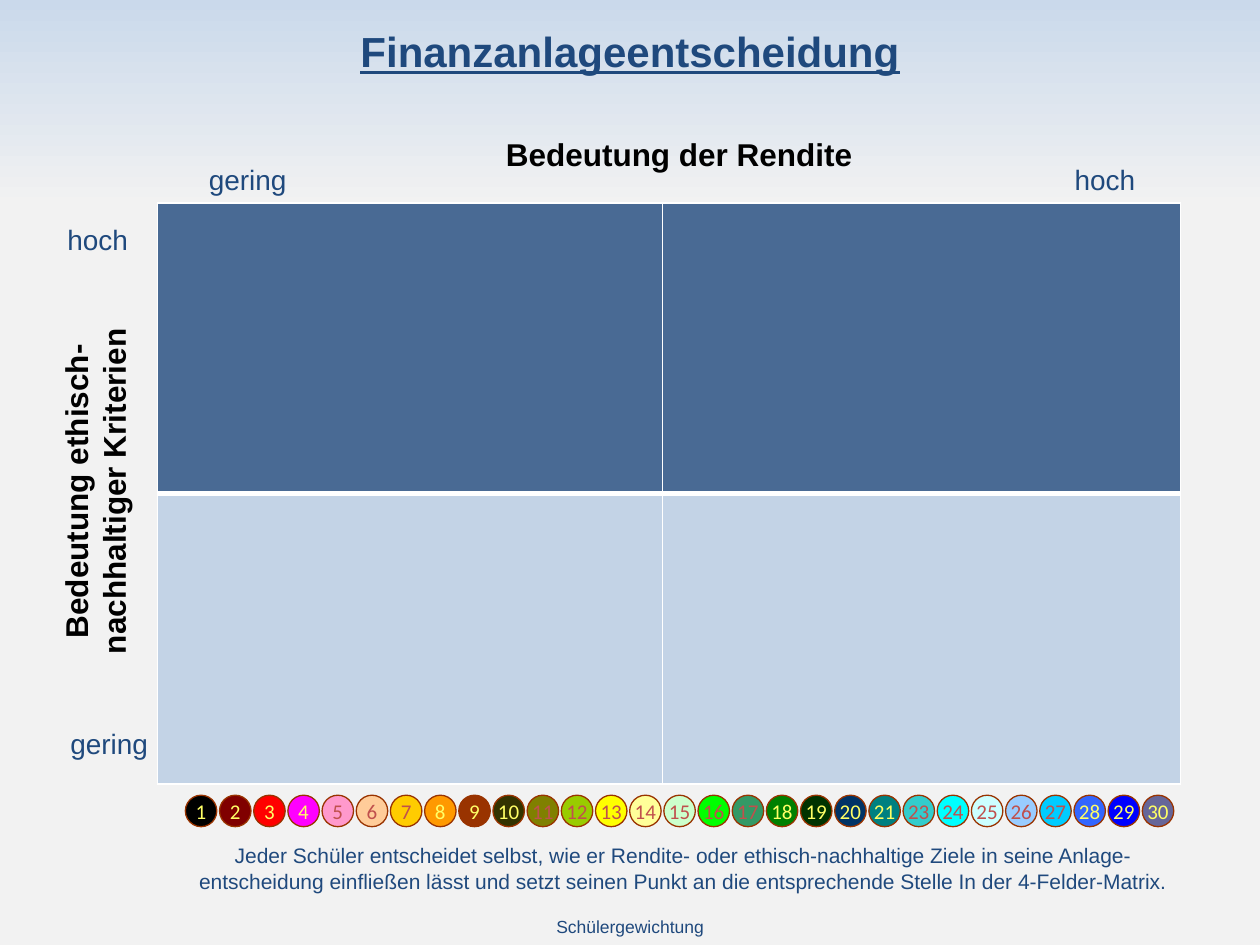
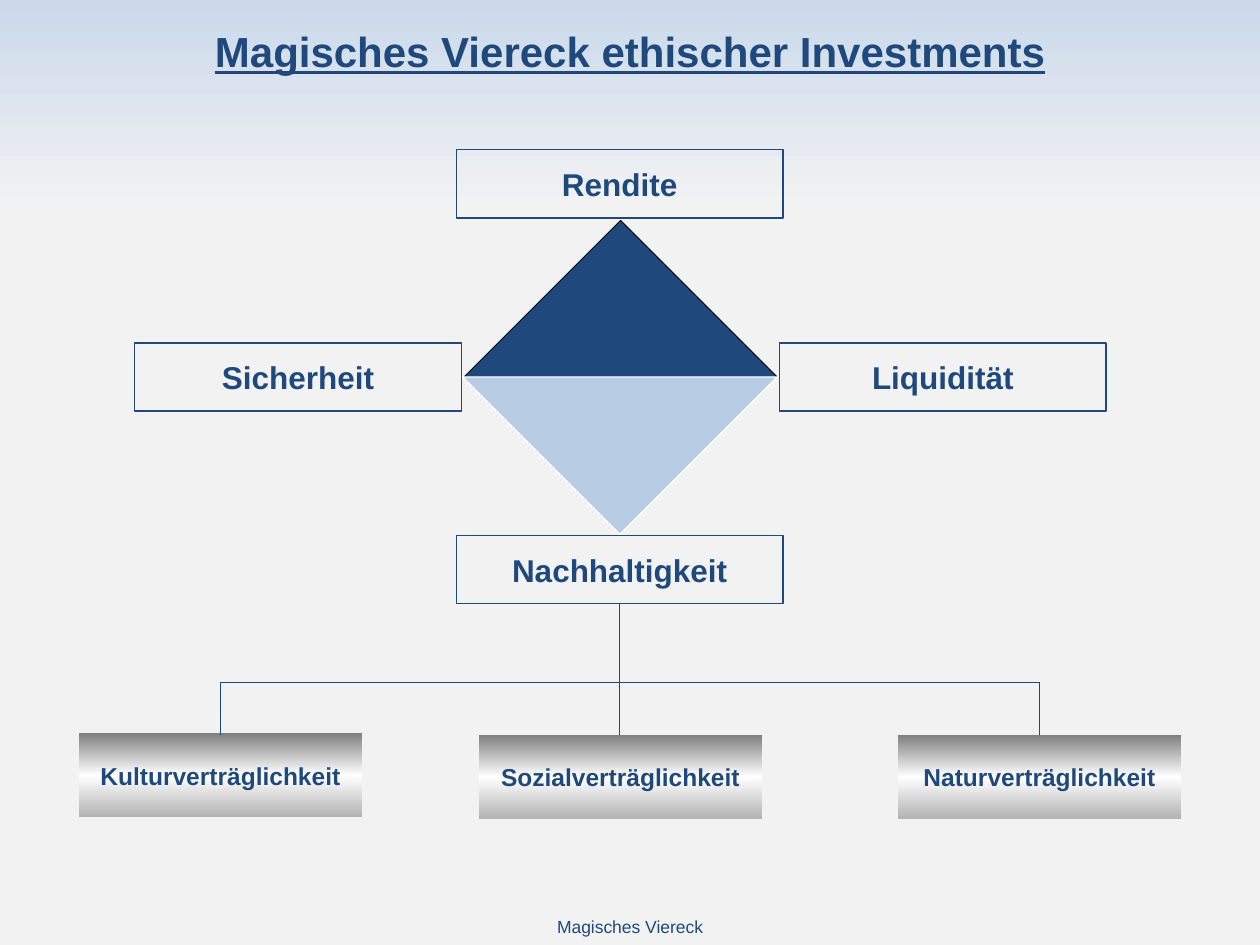
from copy import deepcopy
from dataclasses import dataclass
from typing import Optional

from lxml.etree import SubElement
from pptx import Presentation
from pptx.dml.color import RGBColor
from pptx.enum.shapes import MSO_CONNECTOR, MSO_SHAPE
from pptx.enum.text import MSO_ANCHOR, MSO_AUTO_SIZE, PP_ALIGN
from pptx.oxml.ns import qn
from pptx.util import Pt

COLORS = {
    "navy": "1F497D", "sky": "B8CCE4", "black": "000000", "white": "FFFFFF",
    "gray": "808080", "rust": "993300", "yellow": "FFFF66", "red": "C0504D",
}
BACKGROUND = [(0, "CAD9EB"), (22, "F2F2F2"), (100, "F2F2F2")]
STEEL = [(0, "808080"), (50, "FFFFFF"), (100, "B2B2B2")]

STYLES = {
    "title": {"name": "Arial", "size": Pt(24), "bold": True, "underline": True},
    "footer": {"name": "Arial", "size": Pt(10), "bold": False},
    "axis": {"name": "Arial", "size": Pt(18), "bold": True},
    "scale": {"name": "Arial", "size": Pt(16)},
    "note": {"name": "Arial", "size": Pt(12)},
    "branch": {"name": "Arial", "size": Pt(14), "bold": True},
    "dot": {"name": "Calibri", "size": Pt(12)},
}


@dataclass
class Label:
    text: str
    left: float
    top: float
    width: float
    height: float
    style: str
    color: str = "navy"
    align: PP_ALIGN = PP_ALIGN.CENTER
    anchor: MSO_ANCHOR = MSO_ANCHOR.TOP
    wrap: bool = True
    vert: Optional[str] = None

    @property
    def frame(self) -> list:
        return [Pt(v) for v in (self.left, self.top, self.width, self.height)]


@dataclass
class Block:
    kind: MSO_SHAPE
    left: float
    top: float
    width: float
    height: float
    fill: Optional[str] = None
    line: Optional[str] = None
    rotation: float = 0


def rgb(color: str) -> RGBColor:
    """Resolve a palette name or a plain hex string."""
    return RGBColor.from_string(COLORS.get(color, color))


def set_gradient(fill, element, stops: list) -> None:
    """Fill from top to bottom; element is the XML that holds the fill."""
    fill.gradient()
    fill.gradient_angle = 270
    gs_list = next(element.iter(qn("a:gsLst")))
    while len(gs_list) < len(stops):
        gs_list.append(deepcopy(gs_list[-1]))
    for stop, (position, color) in zip(fill.gradient_stops, stops):
        stop.position = position / 100
        stop.color.rgb = rgb(color)


def write_text(sp, label: Label) -> None:
    tf = sp.text_frame
    for key, value in {"word_wrap": label.wrap, "auto_size": MSO_AUTO_SIZE.NONE,
                       "vertical_anchor": label.anchor}.items():
        setattr(tf, key, value)
    if label.vert:
        tf._txBody.bodyPr.set("vert", label.vert)
    p = tf.paragraphs[0]
    p.alignment = label.align
    r = p.add_run()
    r.text = label.text
    for key, value in STYLES[label.style].items():
        setattr(r.font, key, value)
    r.font.color.rgb = rgb(label.color)


def add_label(slide, label: Label) -> None:
    write_text(slide.shapes.add_textbox(*label.frame), label)


def add_block(slide, block: Block):
    sp = slide.shapes.add_shape(
        block.kind, Pt(block.left), Pt(block.top), Pt(block.width), Pt(block.height))
    sp.shadow.inherit = False
    sp.rotation = block.rotation
    for fill, color in ((sp.fill, block.fill), (sp.line.fill, block.line)):
        if color:
            fill.solid()
            fill.fore_color.rgb = rgb(color)
        else:
            fill.background()
    if block.line:
        sp.line.width = Pt(0.75)
    return sp


def add_text_block(slide, label: Label, kind=MSO_SHAPE.RECTANGLE, fill=None, line=None):
    sp = add_block(slide, Block(kind, label.left, label.top, label.width,
                                label.height, fill, line))
    label.anchor, label.wrap = MSO_ANCHOR.MIDDLE, False
    write_text(sp, label)
    return sp


def add_line(slide, x1: float, y1: float, x2: float, y2: float) -> None:
    cn = slide.shapes.add_connector(
        MSO_CONNECTOR.STRAIGHT, Pt(x1), Pt(y1), Pt(x2), Pt(y2))
    cn.line.color.rgb = rgb("navy")
    cn.line.width = Pt(0.75)
    SubElement(cn._element.spPr, qn("a:effectLst"))


def new_slide(prs, heading: str, footer: str):
    """Add a slide with its underlined heading and its small title at the foot."""
    slide = prs.slides.add_slide(prs.slide_layouts[5])
    add_label(slide, Label(heading, 24, 3, 672, 52.5, "title",
                           anchor=MSO_ANCHOR.MIDDLE, wrap=False))
    label = Label(footer, 288, 518.4, 144, 21.6, "footer", anchor=MSO_ANCHOR.MIDDLE)
    title = slide.shapes.title
    title.left, title.top, title.width, title.height = label.frame
    write_text(title, label)
    return slide


def format_cell(cell, color: str, borders: dict) -> None:
    """Set white borders of the given widths and a fill of 80 % opacity."""
    tc_pr = cell._tc.get_or_add_tcPr()
    for side, width in borders.items():
        ln = SubElement(tc_pr, qn(f"a:{side}"), w=str(Pt(width)))
        SubElement(SubElement(ln, qn("a:solidFill")), qn("a:srgbClr"), val=COLORS["white"])
    cell.fill.solid()
    cell.fill.fore_color.rgb = rgb(color)
    SubElement(tc_pr.find(qn("a:solidFill"))[0], qn("a:alpha"), val="80000")


def add_matrix(slide) -> None:
    table = slide.shapes.add_table(2, 2, Pt(90), Pt(116), Pt(584.6), Pt(332)).table
    for column, width in zip(table.columns, (288.7, 295.9)):
        column.width = Pt(width)
    rows = (("navy", 1, 3), ("sky", 3, 1))
    for i, (color, top, bottom) in enumerate(rows):
        table.rows[i].height = Pt(166)
        for cell in table.rows[i].cells:
            format_cell(cell, color, {"lnL": 1, "lnR": 1, "lnT": top, "lnB": bottom})


AXIS_LABELS = [
    Label("Bedeutung der Rendite", 280.8, 73.4, 214.6, 28.8, "axis", "black", wrap=False),
    Label("gering", 112.3, 89.3, 60.5, 26.6, "scale", align=PP_ALIGN.LEFT),
    Label("hoch", 607, 89.3, 51.1, 26.6, "scale", align=PP_ALIGN.LEFT),
    Label("hoch", 24, 123.8, 56.2, 26.6, "scale", align=PP_ALIGN.RIGHT),
    Label("gering", 24, 411.8, 67.7, 26.6, "scale", align=PP_ALIGN.RIGHT),
    Label("Bedeutung ethisch- nachhaltiger Kriterien", 28.8, 167, 58.3, 227.5,
          "axis", "black", vert="vert270"),
    Label("Jeder Schüler entscheidet selbst, wie er Rendite- oder ethisch-nachhaltige "
          "Ziele in seine Anlage-entscheidung einfließen lässt und setzt seinen Punkt "
          "an die entsprechende Stelle In der 4-Felder-Matrix.",
          106.6, 478.1, 568, 36.7, "note"),
]
DOT_NUMBERS = [n for n in range(1, 31) if n != 22]
DOT_FILLS = """
    000000 800000 FF0000 FF00FF FF99CC FFCC99 FFCC00 FF9900 993300 333300
    808000 99CC00 FFFF00 FFFF99 CCFFCC 00FF00 339966 008000 003300 003366
    008080 33CCCC 00FFFF CCFFFF 99CCFF 00CCFF 3366FF 0000FF 666699""".split()
RED_NUMBERS = {5, 6, 7, *range(11, 18), *range(23, 28)}


def build_decision_slide(prs) -> None:
    slide = new_slide(prs, "Finanzanlageentscheidung", "Schülergewichtung")
    add_matrix(slide)
    for label in AXIS_LABELS:
        add_label(slide, label)
    for i, (number, fill) in enumerate(zip(DOT_NUMBERS, DOT_FILLS)):
        color = "red" if number in RED_NUMBERS else "yellow"
        label = Label(str(number), 105.9 + 19.53 * i, 454.4, 18, 18, "dot", color)
        add_text_block(slide, label, MSO_SHAPE.OVAL, fill, "rust")


GOALS = [("Rendite", 260.8, 85.6), ("Nachhaltigkeit", 260.8, 306),
         ("Liquidität", 445.5, 196), ("Sicherheit", 77, 196)]
BRANCHES = [("Kulturverträglichkeit", 45, 419), ("Sozialverträglichkeit", 273.6, 420),
            ("Naturverträglichkeit", 513, 420)]
TREE_LINES = [(354, 345.3, 354, 420), (126, 390, 594, 390),
              (126, 390, 126, 420), (594, 390, 594, 420)]
DIAMOND = [
    Block(MSO_SHAPE.RECTANGLE, 291.6, 152.2, 126, 126, "gray", "black", 45),
    Block(MSO_SHAPE.RECTANGLE, 291.6, 152.6, 126, 126, "navy", rotation=45),
    Block(MSO_SHAPE.ISOSCELES_TRIANGLE, 264.2, 215.4, 180, 90, "sky", "white", 180),
]


def build_square_slide(prs) -> None:
    slide = new_slide(prs, "Magisches Viereck ethischer Investments", "Magisches Viereck")
    for text, left, top in GOALS:
        add_text_block(slide, Label(text, left, top, 186.6, 39, "axis"), line="navy")
    for text, left, top in BRANCHES:
        sp = add_text_block(slide, Label(text, left, top, 162, 48, "branch"))
        set_gradient(sp.fill, sp._element, STEEL)
    for ends in TREE_LINES:
        add_line(slide, *ends)
    for block in DIAMOND:
        add_block(slide, block)


def main() -> None:
    prs = Presentation()
    prs.slide_width, prs.slide_height = Pt(720), Pt(540)
    master = prs.slide_master
    set_gradient(master.background.fill, master._element, BACKGROUND)
    build_decision_slide(prs)
    build_square_slide(prs)
    prs.save("out.pptx")


if __name__ == "__main__":
    main()
